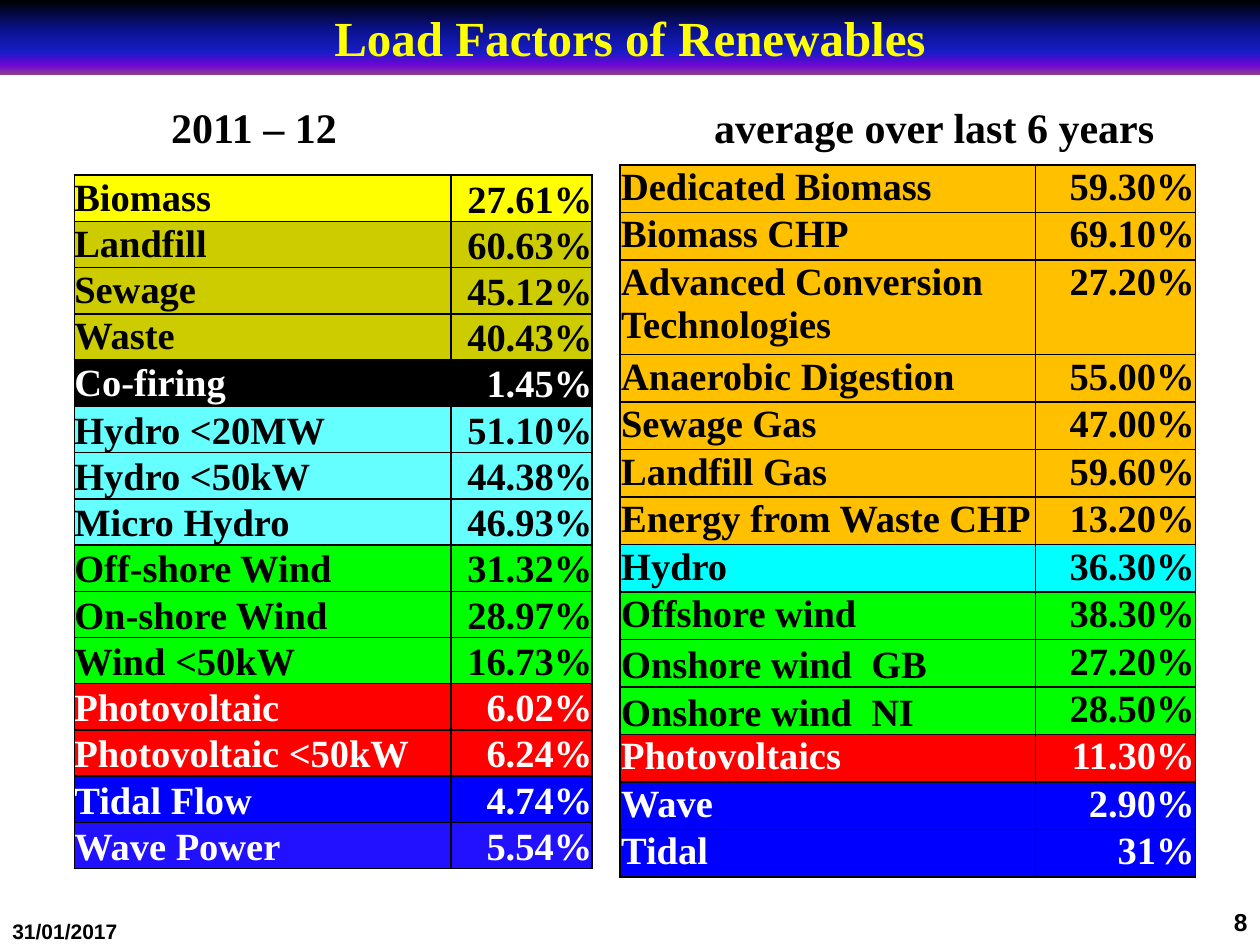
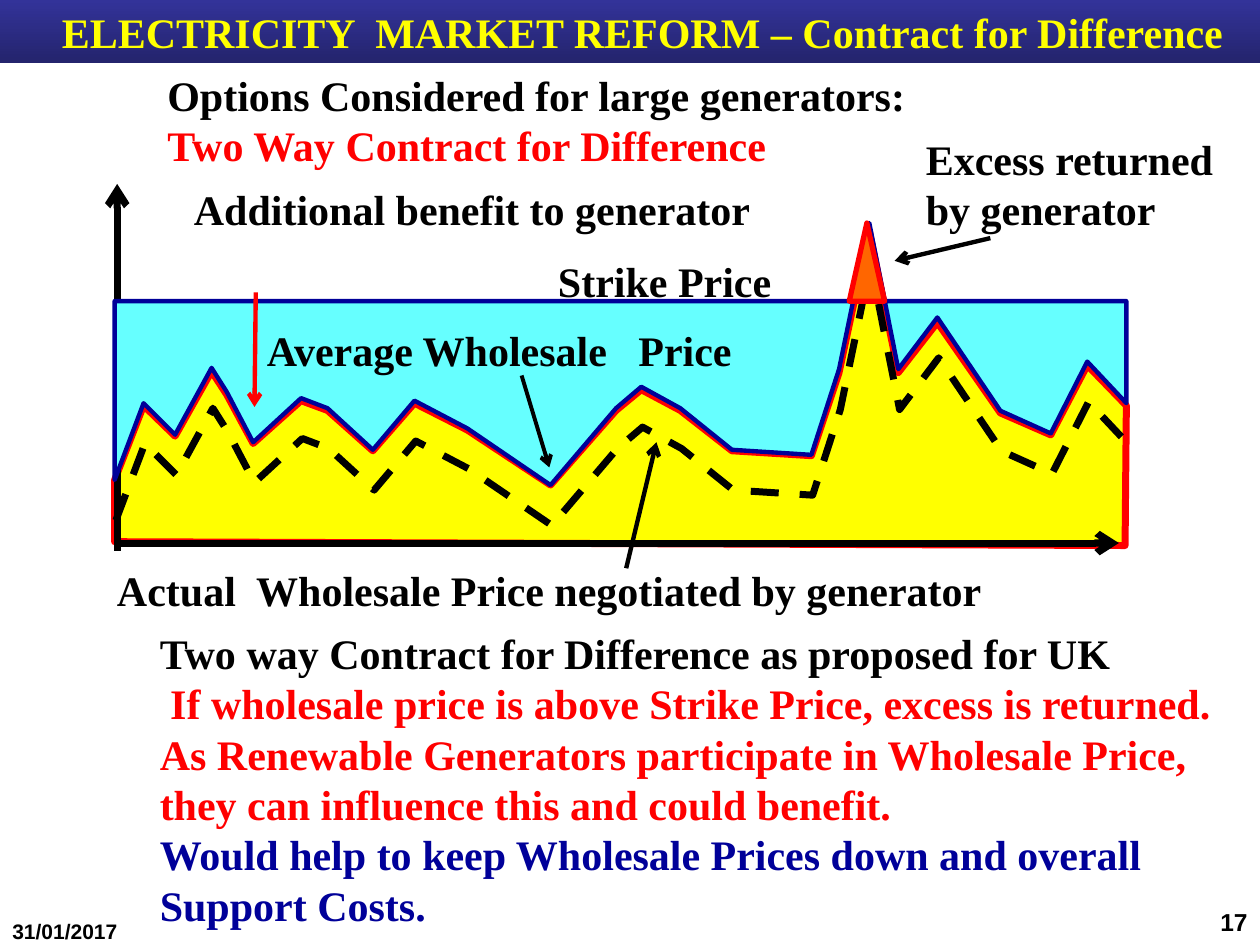
from lxml import etree
from pptx import Presentation
from pptx.dml.color import RGBColor
from pptx.enum.dml import MSO_LINE
from pptx.enum.shapes import MSO_CONNECTOR, MSO_SHAPE
from pptx.enum.text import MSO_ANCHOR as ANCHOR, MSO_AUTO_SIZE, PP_ALIGN as ALIGN
from pptx.oxml import parse_xml
from pptx.oxml.ns import nsdecls, qn
from pptx.util import Inches, Pt

BLACK, WHITE, RED, YELLOW = "000000", "FFFFFF", "FF0000", "FFFF00"
OLIVE, AMBER, ORANGE = "CCCC00", "FFC000", "FF6600"
AQUA, CYAN, GREEN = "66FFFF", "00FFFF", "00FF00"
BLUE, VIOLET, NAVY = "0000FF", "2211FF", "000099"
DARK_FILLS = {BLACK, RED, BLUE, VIOLET}
SERIF, SANS = "Times New Roman", "Arial"
DATE = "31/01/2017"


def color(value):
    return RGBColor.from_string(value)


class SlideBuilder:
    def __init__(self, deck):
        self.deck = deck
        self.page = None

    def start(self, title, size, height, stops, number, left_margin=0.1):
        self.page = self.deck.slides.add_slide(self.deck.slide_layouts[5])
        band = self.page.shapes.title
        band.left, band.top = Inches(0), Inches(0)
        band.width, band.height = self.deck.slide_width, Inches(height)
        band.fill.gradient()
        band.fill.gradient_angle = 270
        stop_list = band._element.spPr.find(".//" + qn("a:gsLst"))
        for stop in list(stop_list):
            stop_list.remove(stop)
        for position, value in stops:
            stop = etree.SubElement(stop_list, qn("a:gs"), pos=str(position * 1000))
            etree.SubElement(stop, qn("a:srgbClr"), val=value)
        frame = band.text_frame
        frame.auto_size = MSO_AUTO_SIZE.NONE
        frame.vertical_anchor = ANCHOR.MIDDLE
        frame.margin_left = Inches(left_margin)
        frame.margin_top = frame.margin_bottom = 0
        self.span(frame.paragraphs[0], title, YELLOW, size, align=ALIGN.CENTER)
        self.text(0, 7.24, 2.33, 0.26, [(DATE, BLACK)], 12, SANS)
        self.text(7.67, 7.15, 2.33, 0.33, [(number, BLACK)], 14, SANS, ALIGN.RIGHT)

    def span(self, para, words, ink=BLACK, size=24, font=SERIF, align=ALIGN.LEFT):
        para.alignment = align
        span = para.add_run()
        span.text = words
        span.font.name, span.font.size = font, Pt(size)
        span.font.bold = True
        span.font.color.rgb = color(ink)

    def text(self, left, top, width, height, lines, size=24, font=SERIF, align=ALIGN.LEFT):
        box = self.page.shapes.add_textbox(
            Inches(left), Inches(top), Inches(width), Inches(height))
        frame = box.text_frame
        frame.word_wrap = True
        for index, (words, ink) in enumerate(lines):
            para = frame.add_paragraph() if index else frame.paragraphs[0]
            self.span(para, words, ink, size, font, align)

    def paint(self, shape, fill, line, weight):
        shape.shadow.inherit = False
        if fill:
            shape.fill.solid()
            shape.fill.fore_color.rgb = color(fill)
        else:
            shape.fill.background()
        shape.line.color.rgb = color(line)
        shape.line.width = Pt(weight)

    def outline(self, points, fill, line, weight, close=True):
        corners = [(Inches(x), Inches(y)) for x, y in points]
        builder = self.page.shapes.build_freeform(*corners[0])
        builder.add_line_segments(corners[1:], close=close)
        shape = builder.convert_to_shape()
        self.paint(shape, fill, line, weight)
        return shape

    def triangle(self, left, top, width, height, fill, line, weight):
        shape = self.page.shapes.add_shape(
            MSO_SHAPE.ISOSCELES_TRIANGLE,
            Inches(left), Inches(top), Inches(width), Inches(height))
        self.paint(shape, fill, line, weight)

    def arrow(self, start, end, line=BLACK, weight=2.5):
        connector = self.page.shapes.add_connector(
            MSO_CONNECTOR.STRAIGHT, *(Inches(value) for value in start + end))
        connector.line.color.rgb = color(line)
        connector.line.width = Pt(weight)
        properties = connector._element.spPr
        etree.SubElement(properties.find(qn("a:ln")), qn("a:tailEnd"), type="arrow")
        etree.SubElement(properties, qn("a:effectLst"))

    def table(self, left, top, widths, row_height, rows, margin, value_anchor, tall=()):
        heights = [row_height * (2 if row[0] in tall else 1) for row in rows]
        grid = self.page.shapes.add_table(
            len(rows), 2, Inches(left), Inches(top),
            Inches(sum(widths)), Inches(sum(heights))).table
        grid.first_row = grid.horz_banding = False
        for column, width in zip(grid.columns, widths):
            column.width = Inches(width)
        for index, (label, value, fill, label_anchor) in enumerate(rows):
            grid.rows[index].height = Inches(heights[index])
            ink = WHITE if fill in DARK_FILLS else BLACK
            name_cell, value_cell = grid.cell(index, 0), grid.cell(index, 1)
            self.cell(name_cell, label, ink, fill, margin, label_anchor, ALIGN.LEFT)
            self.cell(value_cell, value, ink, fill, margin, value_anchor, ALIGN.RIGHT)

    def cell(self, cell, words, ink, fill, margin, anchor, align):
        cell.margin_left = cell.margin_right = cell.margin_top = Inches(margin)
        cell.margin_bottom = 0
        cell.vertical_anchor = anchor
        cell.fill.solid()
        cell.fill.fore_color.rgb = color(fill)
        self.span(cell.text_frame.paragraphs[0], words, ink, 22, align=align)
        for index, side in enumerate(("lnL", "lnR", "lnT", "lnB")):
            border = parse_xml(
                f'<a:{side} {nsdecls("a")} w="12700"><a:solidFill>'
                f'<a:srgbClr val="{BLACK}"/></a:solidFill></a:{side}>')
            cell._tc.get_or_add_tcPr().insert(index, border)


def load_factors(builder):
    builder.start("Load Factors of Renewables", 28, 0.59,
                  [(0, BLACK), (40, "0A128C"), (70, "181CC7"),
                   (88, "7005D4"), (100, "8C3D91")], "8")
    builder.text(1.26, 0.76, 3, 0.5, [("2011 – 12", BLACK)])
    builder.text(5.57, 0.76, 3.9, 0.5, [("average over last 6 years", BLACK)])
    year_rows = [
        ("Biomass", "27.61%", YELLOW, ANCHOR.MIDDLE),
        ("Landfill", "60.63%", OLIVE, ANCHOR.MIDDLE),
        ("Sewage", "45.12%", OLIVE, ANCHOR.MIDDLE),
        ("Waste", "40.43%", OLIVE, ANCHOR.MIDDLE),
        ("Co-firing", "1.45%", BLACK, ANCHOR.MIDDLE),
        ("Hydro <20MW", "51.10%", AQUA, ANCHOR.BOTTOM),
        ("Hydro <50kW", "44.38%", AQUA, ANCHOR.BOTTOM),
        ("Micro Hydro", "46.93%", AQUA, ANCHOR.BOTTOM),
        ("Off-shore Wind", "31.32%", GREEN, ANCHOR.BOTTOM),
        ("On-shore Wind", "28.97%", GREEN, ANCHOR.BOTTOM),
        ("Wind <50kW", "16.73%", GREEN, ANCHOR.BOTTOM),
        ("Photovoltaic", "6.02%", RED, ANCHOR.BOTTOM),
        ("Photovoltaic <50kW", "6.24%", RED, ANCHOR.BOTTOM),
        ("Tidal Flow", "4.74%", BLUE, ANCHOR.BOTTOM),
        ("Wave Power", "5.54%", VIOLET, ANCHOR.BOTTOM),
    ]
    average_rows = [
        ("Dedicated Biomass", "59.30%", AMBER, ANCHOR.TOP),
        ("Biomass CHP", "69.10%", AMBER, ANCHOR.TOP),
        ("Advanced Conversion Technologies", "27.20%", AMBER, ANCHOR.TOP),
        ("Anaerobic Digestion", "55.00%", AMBER, ANCHOR.TOP),
        ("Sewage Gas", "47.00%", AMBER, ANCHOR.TOP),
        ("Landfill Gas", "59.60%", AMBER, ANCHOR.TOP),
        ("Energy from Waste CHP", "13.20%", AMBER, ANCHOR.TOP),
        ("Hydro", "36.30%", CYAN, ANCHOR.TOP),
        ("Offshore wind", "38.30%", GREEN, ANCHOR.TOP),
        ("Onshore wind  GB", "27.20%", GREEN, ANCHOR.BOTTOM),
        ("Onshore wind  NI", "28.50%", GREEN, ANCHOR.BOTTOM),
        ("Photovoltaics", "11.30%", RED, ANCHOR.TOP),
        ("Wave", "2.90%", BLUE, ANCHOR.TOP),
        ("Tidal", "31%", BLUE, ANCHOR.TOP),
    ]
    builder.table(0.59, 1.39, (2.99, 1.12), 5.5 / 15, year_rows, 0, ANCHOR.BOTTOM)
    builder.table(4.92, 1.31, (3.3, 1.27), 5.64 / 15, average_rows, 0.01, ANCHOR.TOP,
                  tall=("Advanced Conversion Technologies",))


def contract_for_difference(builder):
    builder.start("ELECTRICITY  MARKET REFORM – Contract for Difference", 24, 0.5,
                  [(0, "333399"), (100, "24246D")], "17", left_margin=0.3)
    price = [
        (0.91, 3.81), (1.14, 3.2), (1.39, 3.45), (1.68, 2.92), (1.8, 3.11),
        (2.01, 3.51), (2.39, 3.16), (2.6, 3.24), (2.96, 3.57), (3.29, 3.18),
        (3.71, 3.4), (4.37, 3.85), (4.89, 3.24), (5.09, 3.07), (5.4, 3.24),
        (5.81, 3.57), (6.44, 3.61), (6.66, 2.93), (6.9, 1.77), (7.13, 2.93),
        (7.44, 2.52), (7.94, 3.26), (8.34, 3.44), (8.63, 2.87), (8.94, 3.2),
    ]
    strike, lowest = 2.39, 3.85
    market = [(x, lowest - 0.97 * (lowest - y)) for x, y in price]
    negotiated = [(x + 0.01, y + 0.32) for x, y in price]

    builder.outline(market + [(8.93, 4.33), (0.91, 4.3)], YELLOW, RED, 4)
    builder.arrow((0.93, 4.37), (0.93, 1.46), weight=4)
    builder.arrow((0.93, 4.31), (8.88, 4.31), weight=4)
    builder.outline([(0.91, strike)] + price + [(8.94, strike)], AQUA, NAVY, 2.5)

    builder.text(1.17, 4.93, 8.83, 2.52, [
        ("Two way Contract for Difference as proposed for UK", BLACK),
        (" If wholesale price is above Strike Price, excess is returned.", RED),
        ("As Renewable Generators participate in Wholesale Price, "
         "they can influence this and could benefit.", RED),
        ("Would help to keep Wholesale Prices down and overall Support Costs.", NAVY)])
    builder.text(4.33, 1.98, 2.35, 0.51, [("Strike Price", BLACK)])
    builder.text(2.02, 2.53, 4.1, 0.5, [("Average Wholesale   Price", BLACK)])
    builder.arrow((4.14, 2.98), (4.36, 3.71), weight=2.25)
    dashes = builder.outline(negotiated, None, BLACK, 4, close=False)
    dashes.line.dash_style = MSO_LINE.DASH
    builder.text(0.83, 4.43, 7.52, 0.5,
                 [("Actual  Wholesale Price negotiated by generator", BLACK)])
    builder.arrow((4.97, 4.51), (5.21, 3.51))
    builder.text(1.44, 1.41, 5.02, 0.51, [("Additional benefit to generator", BLACK)])
    builder.arrow((2.03, 2.32), (2.02, 3.23), RED)
    builder.text(1.23, 0.5, 6.2, 0.91, [
        ("Options Considered for large generators:", BLACK),
        ("Two Way Contract for Difference", RED)])
    builder.triangle(6.74, 1.77, 0.28, 0.62, ORANGE, RED, 3)
    builder.text(7.25, 1.01, 2.56, 0.91, [("Excess returned by generator", BLACK)])
    builder.arrow((7.86, 1.89), (7.1, 2.07))


def main():
    deck = Presentation()
    deck.slide_width, deck.slide_height = Inches(10), Inches(7.5)
    builder = SlideBuilder(deck)
    load_factors(builder)
    contract_for_difference(builder)
    deck.save("out.pptx")


if __name__ == "__main__":
    main()
